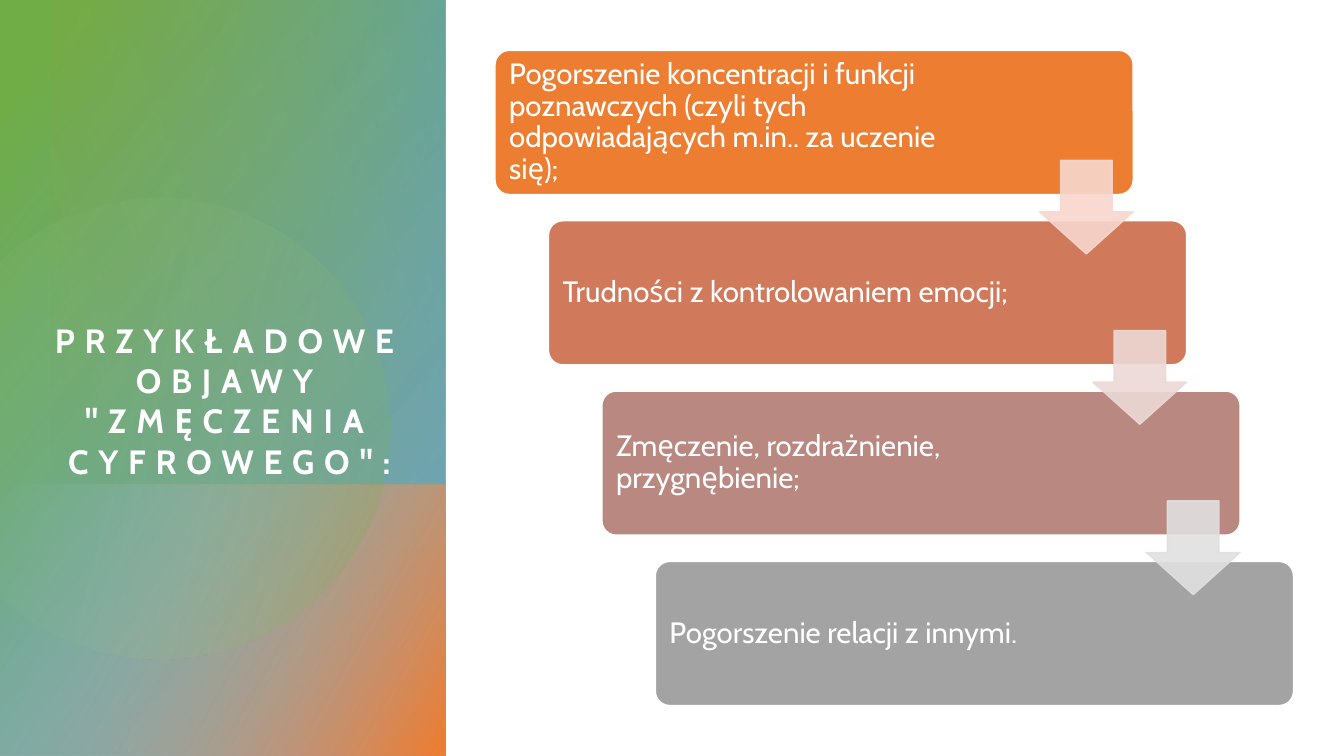
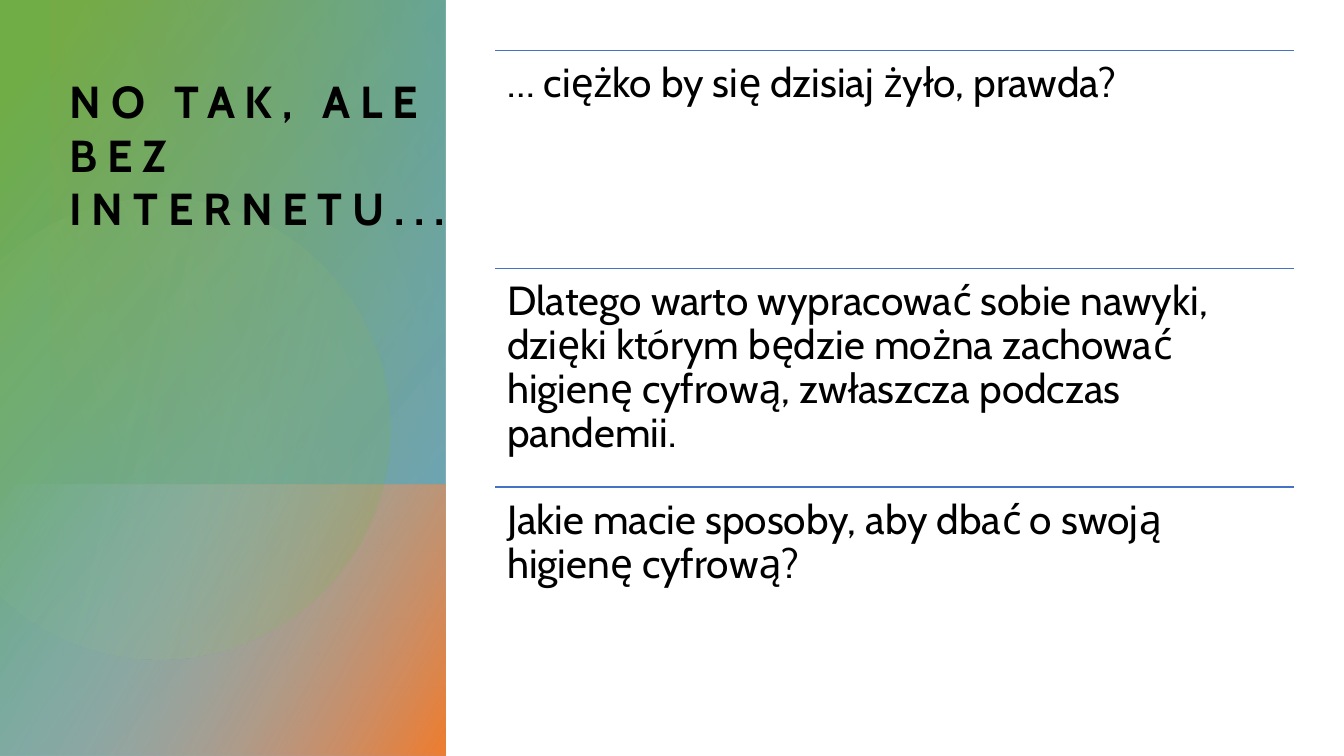
import math
from lxml import etree
from pptx import Presentation
from pptx import util as u
from pptx.dml.color import RGBColor
from pptx.enum import shapes, text
from pptx.oxml.ns import qn

SYMPTOMS = {
    "title": 'PRZYKŁADOWE OBJAWY "ZMĘCZENIA CYFROWEGO":',
    "cards": [
        ("Pogorszenie koncentracji i funkcji poznawczych (czyli tych "
         "odpowiadających m.in.. za uczenie się);", "ED7D31", "F8D7CE"),
        ("Trudności z kontrolowaniem emocji;", "D17A5B", "EDD9D6"),
        ("Zmęczenie, rozdrażnienie, przygnębienie;", "B88881", "E0E0E0"),
        ("Pogorszenie relacji z innymi.", "A3A3A3", None),
    ],
}
HABITS = {
    "title": "NO TAK, ALE\vBEZ INTERNETU...",
    "rows": [
        "… ciężko by się dzisiaj żyło, prawda?",
        "Dlatego warto wypracować sobie nawyki, dzięki którym będzie można "
        "zachować higienę cyfrową, zwłaszcza podczas pandemii.",
        "Jakie macie sposoby, aby dbać o swoją higienę cyfrową?",
    ],
}

THEME = {
    "font": "Cabin", "light": "FFFFFF", "dark": "000000", "rule": "4472C4",
    "symptoms_title": 24, "habits_title": 32, "card_size": 21, "row_size": 29,
    "tracking": 7, "leading": 0.9, "line": 1, "arrow_alpha": 90,
    "base": ([(8, "70AD47", 100), (100, "5B9BD5", 89)], 40),
    "corner": ([(0, "9DC3E6", 0), (99, "ED7D31", 100)], 30),
    "disc": ([(36, "A9D18E", 6), (100, "70AD47", 26)], 14),
    "glow": ([(0, "5B9BD5", 29), (100, "CF9B00", 0)], 160),
}
W, H = 13.33, 7.5
PANEL_W = 4.42
CORNER_H = 2.69
GLOW_W, GLOW_H = 3.92, 4.81
DISC_X, DISC_Y, DISC_R, DISC_STEPS = 1.58, 4.25, 2.29, 36
LEFT, RIGHT, TOP, BOTTOM = 4.91, 12.83, 0.5, 7.0
CARD_W, CARD_H, ARROW, ARROW_DROP = 6.33, 1.43, 0.93, 1.09


def rgb(value):
    return RGBColor.from_string(value)


def box(*sides):
    return [u.Inches(side) for side in sides]


def apply(target, **values):
    for name, value in values.items():
        setattr(target, name, value)


def fade(sp, alphas):
    for color, alpha in zip(sp.element.iter(qn("a:srgbClr")), alphas):
        if alpha < 100:
            etree.SubElement(color, qn("a:alpha")).set("val", str(alpha * 1000))


def blend(sp, stops, angle):
    sp.shadow.inherit = False
    sp.line.fill.background()
    sp.fill.gradient()
    sp.fill.gradient_angle = 360 - angle
    for stop, (position, color, _) in zip(sp.fill.gradient_stops, stops):
        stop.position = position / 100
        stop.color.rgb = rgb(color)
    fade(sp, [alpha for _, _, alpha in stops])


def preset(s, kind, place, fill, line=None, adjust=()):
    sp = s.shapes.add_shape(kind, *box(*place))
    sp.shadow.inherit = False
    sp.fill.solid()
    sp.fill.fore_color.rgb = rgb(fill)
    if line:
        sp.line.color.rgb = rgb(line)
        sp.line.width = u.Pt(THEME["line"])
    else:
        sp.line.fill.background()
    for i, value in enumerate(adjust):
        sp.adjustments[i] = value
    return sp


def write(sp, words, size, color, align, anchor, insets, leading=1.0, bold=False):
    tf = sp.text_frame
    tf.text = words
    margins = dict(zip(("margin_left", "margin_top", "margin_right", "margin_bottom"),
                       box(*insets)))
    apply(tf, word_wrap=True, auto_size=text.MSO_AUTO_SIZE.NONE,
          vertical_anchor=anchor, **margins)
    p = tf.paragraphs[0]
    apply(p, alignment=align, line_spacing=leading)
    for r in p.runs:
        apply(r.font, name=THEME["font"], size=u.Pt(size), bold=bold)
        r.font.color.rgb = rgb(color)


def draw_disc(s):
    reach = math.acos(-DISC_X / DISC_R)
    angles = [reach * (2 * i / DISC_STEPS - 1) for i in range(DISC_STEPS + 1)]
    points = [box(DISC_X + DISC_R * math.cos(a), DISC_Y + DISC_R * math.sin(a))
              for a in angles]
    outline = s.shapes.build_freeform(*points[0])
    outline.add_line_segments(points[1:], close=True)
    return outline.convert_to_shape()


def draw_panel(s):
    preset(s, shapes.MSO_SHAPE.RECTANGLE, (0, 0, W, H), THEME["light"])
    blocks = {
        "base": (0, 0, PANEL_W, H),
        "corner": (0, H - CORNER_H, PANEL_W, CORNER_H),
        "disc": None,
        "glow": (PANEL_W - GLOW_W, 0, GLOW_W, GLOW_H),
    }
    for name, place in blocks.items():
        if place:
            sp = s.shapes.add_shape(shapes.MSO_SHAPE.RECTANGLE, *box(*place))
        else:
            sp = draw_disc(s)
        blend(sp, *THEME[name])


def new_slide(prs, title, place, size, color, align):
    s = prs.slides.add_slide(prs.slide_layouts[5])
    draw_panel(s)
    sp = s.shapes.title
    sp.element.getparent().append(sp.element)
    apply(sp, **dict(zip(("left", "top", "width", "height"), box(*place))))
    write(sp, title, size, color, align, text.MSO_ANCHOR.BOTTOM, (0,) * 4, bold=True)
    for props in sp.element.iter(qn("a:rPr")):
        props.set("spc", str(THEME["tracking"] * 100))
    return s


def symptoms_slide(prs):
    s = new_slide(prs, SYMPTOMS["title"], (0.42, 1.09, 3.71, 3.68),
                  THEME["symptoms_title"], THEME["light"], text.PP_ALIGN.CENTER)
    cards = SYMPTOMS["cards"]
    dx = (RIGHT - LEFT - CARD_W) / (len(cards) - 1)
    dy = (BOTTOM - TOP - CARD_H) / (len(cards) - 1)
    for i, (words, fill, _) in enumerate(cards):
        sp = preset(s, shapes.MSO_SHAPE.ROUNDED_RECTANGLE,
                    (LEFT + i * dx, TOP + i * dy, CARD_W, CARD_H),
                    fill, THEME["light"], [0.1])
        write(sp, words, THEME["card_size"], THEME["light"], text.PP_ALIGN.LEFT,
              text.MSO_ANCHOR.MIDDLE, (0.1, 0.05, 1.6, 0.05), THEME["leading"])
    for i, (_, _, tint) in enumerate(cards[:-1]):
        sp = preset(s, shapes.MSO_SHAPE.DOWN_ARROW,
                    (LEFT + i * dx + CARD_W - ARROW, TOP + i * dy + ARROW_DROP,
                     ARROW, ARROW), tint, tint, [0.55, 0.45])
        fade(sp, [THEME["arrow_alpha"]] * 2)


def habits_slide(prs):
    s = new_slide(prs, HABITS["title"], (0.69, -1.35, 4.97, 3.68),
                  THEME["habits_title"], THEME["dark"], text.PP_ALIGN.LEFT)
    step = (BOTTOM - TOP) / len(HABITS["rows"])
    for i, words in enumerate(HABITS["rows"]):
        y = TOP + i * step
        rule = s.shapes.add_connector(shapes.MSO_CONNECTOR.STRAIGHT,
                                      *box(LEFT, y, RIGHT, y))
        rule.line.color.rgb = rgb(THEME["rule"])
        rule.line.width = u.Pt(THEME["line"])
        etree.SubElement(rule.element.spPr, qn("a:effectLst"))
        sp = s.shapes.add_textbox(*box(LEFT, y, RIGHT - LEFT, step))
        write(sp, words, THEME["row_size"], THEME["dark"], text.PP_ALIGN.LEFT,
              text.MSO_ANCHOR.TOP, (0.12,) * 4, THEME["leading"])


def main():
    prs = Presentation()
    apply(prs, slide_width=u.Inches(W), slide_height=u.Inches(H))
    symptoms_slide(prs)
    habits_slide(prs)
    prs.save("out.pptx")


if __name__ == "__main__":
    main()
